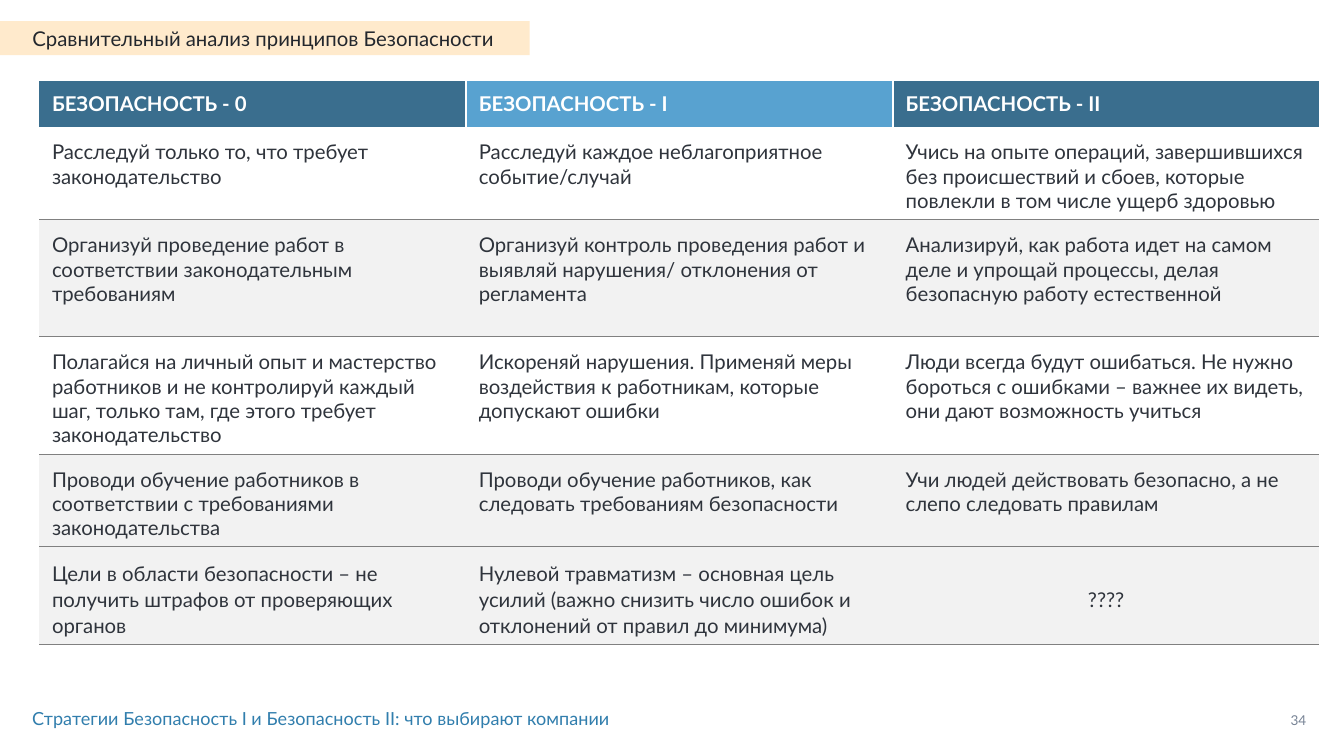
from lxml import etree
from pptx import Presentation
from pptx.dml.color import RGBColor
from pptx.enum.shapes import MSO_SHAPE
from pptx.enum.text import MSO_ANCHOR, PP_ALIGN
from pptx.oxml.ns import qn
from pptx.util import Inches, Pt

RECTANGLE = MSO_SHAPE.RECTANGLE
TOP, MIDDLE = MSO_ANCHOR.TOP, MSO_ANCHOR.MIDDLE
LEFT, CENTER = PP_ALIGN.LEFT, PP_ALIGN.CENTER

WIDTH, HEIGHT = 8.27, 4.65
FONT = "Lato"
TITLE = "Сравнительный анализ принципов Безопасности"
FOOTER = "Стратегии Безопасность I и Безопасность II: что выбирают компании"
PAGE_NUMBER = "34"
HEADERS = [
    ("БЕЗОПАСНОСТЬ - 0", "3A6E8E"),
    ("БЕЗОПАСНОСТЬ - I", "58A2D0"),
    ("БЕЗОПАСНОСТЬ - II", "3A6E8E"),
]
PRINCIPLES = [
    ("Расследуй только то, что требует законодательство",
     "Расследуй каждое неблагоприятное событие/случай",
     "Учись на опыте операций, завершившихся без происшествий и сбоев, "
     "которые повлекли в том числе ущерб здоровью"),
    ("Организуй проведение работ в соответствии законодательным требованиям",
     "Организуй контроль проведения работ и выявляй нарушения/ отклонения от регламента",
     "Анализируй, как работа идет на самом деле и упрощай процессы, "
     "делая безопасную работу естественной"),
    ("Полагайся на личный опыт и мастерство работников и не контролируй каждый шаг, "
     "только там, где этого требует законодательство",
     "Искореняй нарушения. Применяй меры воздействия к работникам, которые допускают ошибки",
     "Люди всегда будут ошибаться. Не нужно бороться с ошибками – важнее их видеть, "
     "они дают возможность учиться"),
    ("Проводи обучение работников в соответствии с требованиями законодательства",
     "Проводи обучение работников, как следовать требованиям безопасности",
     "Учи людей действовать безопасно, а не слепо следовать правилам"),
    ("Цели в области безопасности – не получить штрафов от проверяющих органов",
     "Нулевой травматизм – основная цель усилий "
     "(важно снизить число ошибок и отклонений от правил до минимума)",
     "????"),
]
ROW_FILLS = [None, "F2F2F2", None, "F2F2F2", "F2F2F2"]
ROW_HEIGHTS = [0.28, 0.57, 0.72, 0.72, 0.57, 0.6]
TABLE_LEFT, TABLE_TOP, TABLE_WIDTH = 0.24, 0.5, 7.88
DIVIDER, RULE = ("FFFFFF", 1), ("808080", 0.5)


def color(value):
    return RGBColor.from_string(value)


def paint(target, fill):
    if fill:
        target.fill.solid()
        target.fill.fore_color.rgb = color(fill)
    else:
        target.fill.background()


def write(frame, text, size, shade, bold=False, **layout):
    para = frame.paragraphs[0]
    for name, value in layout.items():
        setattr(para, name, value)
    span = para.add_run()
    span.text = text
    for name, value in {"name": FONT, "size": Pt(size), "bold": bold}.items():
        setattr(span.font, name, value)
    span.font.color.rgb = color(shade)


def set_borders(cell, borders):
    properties = cell._tc.get_or_add_tcPr()
    for index, side in enumerate("LRTB"):
        line = etree.Element(qn(f"a:ln{side}"))
        if side in borders:
            shade, width = borders[side]
            line.set("w", str(Pt(width)))
            solid = etree.SubElement(line, qn("a:solidFill"))
            etree.SubElement(solid, qn("a:srgbClr"), val=shade)
        else:
            etree.SubElement(line, qn("a:noFill"))
        properties.insert(index, line)


def fill_cell(cell, text, fill, borders, top, anchor, shade, **layout):
    sides = {"left": 0.08, "right": 0.08, "top": top, "bottom": 0.04}
    for side, gap in sides.items():
        setattr(cell, f"margin_{side}", Inches(gap))
    cell.vertical_anchor = anchor
    paint(cell, fill)
    set_borders(cell, borders)
    write(cell.text_frame, text, 9, shade, **layout)


def add_principles(page):
    rows, columns = len(ROW_HEIGHTS), len(HEADERS)
    table = page.shapes.add_table(
        rows, columns, Inches(TABLE_LEFT), Inches(TABLE_TOP),
        Inches(TABLE_WIDTH), Inches(sum(ROW_HEIGHTS))).table
    table.horz_banding = False
    for column in table.columns:
        column.width = Inches(TABLE_WIDTH / columns)
    for row, height in zip(table.rows, ROW_HEIGHTS):
        row.height = Inches(height)
    for index, (text, fill) in enumerate(HEADERS):
        borders = {}
        if index > 0:
            borders["L"] = DIVIDER
        if index < columns - 1:
            borders["R"] = DIVIDER
        fill_cell(table.cell(0, index), text, fill, borders, 0.04, MIDDLE, "FFFFFF", bold=True)
    for number, (texts, fill) in enumerate(zip(PRINCIPLES, ROW_FILLS), 1):
        borders = {"B": RULE}
        if number > 1:
            borders["T"] = RULE
        spacing = {"line_spacing": 1.07, "space_after": Pt(8)} if number == rows - 1 else {}
        for index, text in enumerate(texts):
            is_question = text == "????"
            fill_cell(table.cell(number, index), text, fill, borders, 0.08,
                      MIDDLE if is_question else TOP, "2F343C",
                      alignment=CENTER if is_question else LEFT, **spacing)


def add_label(page, text, place, size, shade, margins, fill=None, alignment=LEFT):
    box = page.shapes.add_shape(RECTANGLE, *map(Inches, place)) if fill else \
        page.shapes.add_textbox(*map(Inches, place))
    if fill:
        box.shadow.inherit = False
        box.line.fill.background()
        paint(box, fill)
    frame = box.text_frame
    for side, gap in zip(("left", "top", "right", "bottom"), margins):
        setattr(frame, f"margin_{side}", Inches(gap))
    frame.word_wrap = True
    frame.vertical_anchor = MIDDLE
    write(frame, text, size, shade, alignment=alignment)


def main():
    """Build the slide comparing the safety principles."""
    deck = Presentation()
    deck.slide_width, deck.slide_height = Inches(WIDTH), Inches(HEIGHT)
    page = deck.slides.add_slide(deck.slide_layouts[6])
    add_label(page, PAGE_NUMBER, (7.83, 4.38, 0.32, 0.1), 6, "778395",
              (0, 0, 0, 0), alignment=CENTER)
    add_principles(page)
    add_label(page, TITLE, (0, 0.13, 3.26, 0.21), 9, "23272D",
              (0.2, 0.05, 0.1, 0.05), fill="FFEACC")
    add_label(page, FOOTER, (0.1, 4.3, 4.78, 0.24), 8, "317EAD", (0.1, 0.05, 0.1, 0.05))
    deck.save("out.pptx")


if __name__ == "__main__":
    main()
